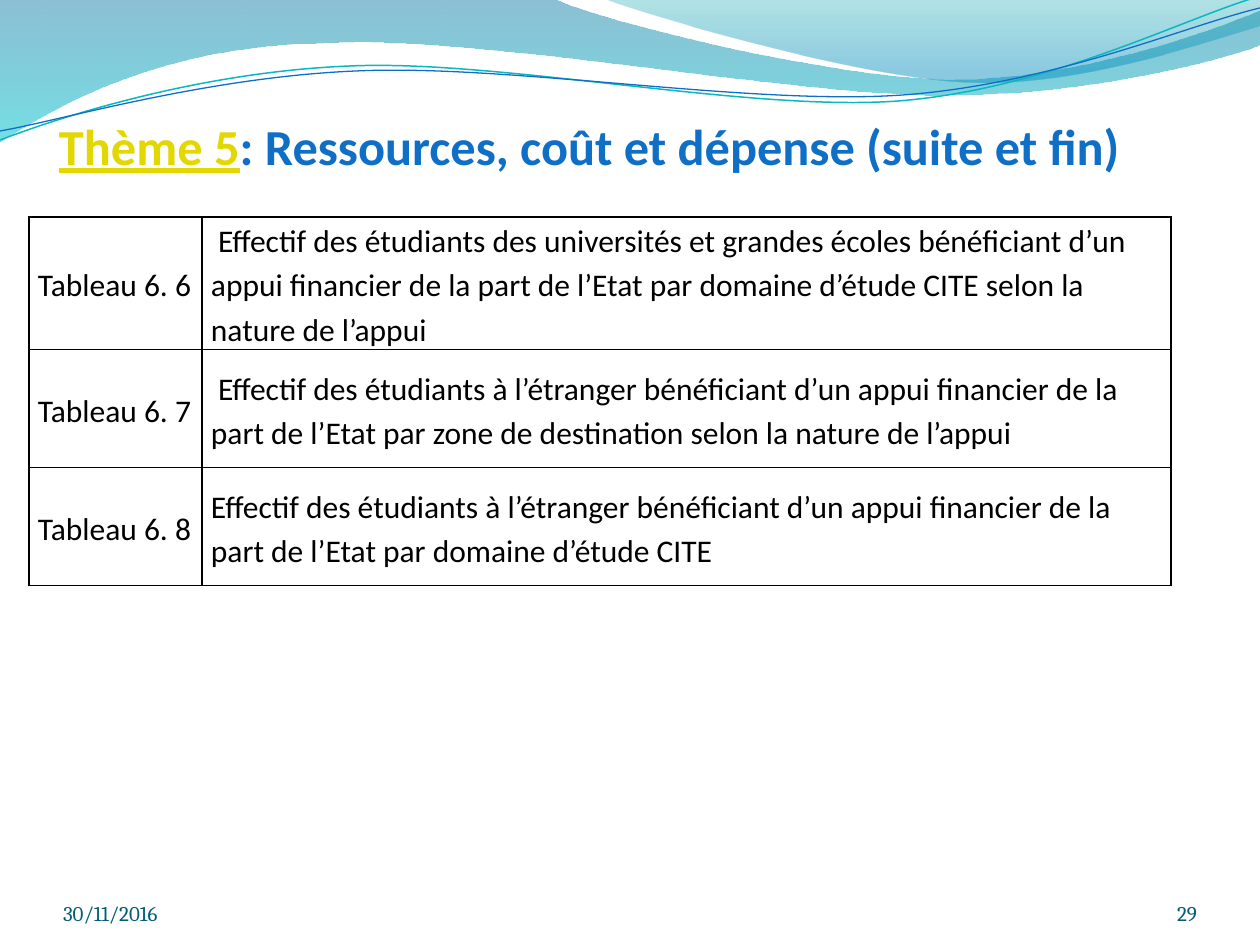
from dataclasses import dataclass

from lxml.etree import SubElement
from pptx import Presentation
from pptx.dml.color import RGBColor as RGB
from pptx.enum.text import MSO_ANCHOR as Anchor, MSO_AUTO_SIZE as AutoSize, PP_ALIGN as Align
from pptx.oxml import parse_xml
from pptx.oxml.ns import nsdecls, qn
from pptx.util import Pt

SCALE = 914400 / 126  # EMU per px
SLIDE_SIZE = (1260, 945)


@dataclass(frozen=True)
class Theme:
    body_font: str = "Calibri"
    footer_font: str = "Cambria"
    title_size: float = 28.8
    body_size: float = 18
    footer_size: float = 12
    accent: str = "E2D700"
    blue: str = "0F6FC6"
    teal: str = "0AB8BF"
    ink: str = "000000"
    footer: str = "045D75"
    # gradient stops: position, colour, opacity in %
    wide_wave: tuple = ((0, "0074A1", 45), (1, "00C6CF", 55))
    right_wave: tuple = ((0, "00A1A9", 30), (0.8, "008BBF", 45))


THEME = Theme()

TITLE = [("Thème 5", THEME.accent, True),
         (": Ressources, coût et dépense (suite et fin)", THEME.blue, False)]
TITLE_BOX = (59, 88, 1134, 88)

ROWS = [
    ("Tableau 6. 6", " Effectif des étudiants des universités et grandes écoles bénéficiant d’un "
     "appui financier de la part de l’Etat par domaine d’étude CITE selon la nature de l’appui"),
    ("Tableau 6. 7", " Effectif des étudiants à l’étranger bénéficiant d’un appui financier de la "
     "part de l’Etat par zone de destination selon la nature de l’appui"),
    ("Tableau 6. 8", "Effectif des étudiants à l’étranger bénéficiant d’un appui financier de la "
     "part de l’Etat par domaine d’étude CITE"),
]
TABLE_ORIGIN = (29, 217)
COLUMN_WIDTHS = (173, 969)
ROW_HEIGHTS = (132, 118, 118)

FOOTERS = [("29", (1092, 876, 105, 50), Align.RIGHT),
           ("30/11/2016", (63, 876, 294, 50), Align.LEFT)]

# Each outline is a start point, then straight steps (1 point) or Bézier steps (3 points).
WAVES = [
    (THEME.wide_wave, (0, 0), [
        [(554, -1)],
        [(600, 21), (837, 79), (955, 79)], [(1075, 79), (1207, 33), (1260, 11)],
        [(1261, 45)],
        [(1237, 55), (1096, 96), (940, 95)], [(784, 95), (481, 35), (324, 43)],
        [(163, 45), (58, 105), (-1, 142)], [(0, 0)]]),
    (THEME.right_wave, (604, -1), [
        [(641, 14), (859, 78), (969, 82)], [(1079, 87), (1211, 40), (1260, 26)],
        [(1260, 0)], [(604, -1)]]),
]
STRANDS = [
    (THEME.teal, 0.85, (0, 140), [
        [(60, 117), (199, 72), (349, 66)], [(498, 59), (747, 112), (898, 101)],
        [(1049, 89), (1182, 19), (1257, -3)]]),
    (THEME.blue, 0.75, (0, 131), [
        [(59, 121), (207, 77), (357, 71)], [(508, 64), (752, 106), (903, 95)],
        [(1053, 84), (1185, 26), (1260, 8)]]),
]


def emu(*lengths):
    return [round(length * SCALE) for length in lengths]


def add_outline(slide, start, steps, close):
    """Draw every point as a line segment, then merge each triple into a Bézier segment."""
    builder = slide.shapes.build_freeform(*emu(*start))
    builder.add_line_segments([emu(*point) for step in steps for point in step], close=close)
    outline = builder.convert_to_shape()
    outline.shadow.inherit = False
    segments = iter(list(outline._element.iter(qn("a:lnTo"))))
    for step in steps:
        lines = [next(segments) for _ in step]
        if len(lines) == 3:
            curve = parse_xml(f'<a:cubicBezTo {nsdecls("a")}/>')
            lines[0].addprevious(curve)
            for line in lines:
                curve.append(line[0])
                line.getparent().remove(line)
    return outline


def add_wave(slide, stops, start, steps):
    wave = add_outline(slide, start, steps, True)
    wave.line.fill.background()
    wave.fill.gradient()
    wave.fill.gradient_angle = 270
    for stop, (position, color, _) in zip(wave.fill.gradient_stops, stops):
        stop.position = position
        stop.color.rgb = RGB.from_string(color)
    for rgb, (_, _, opacity) in zip(wave._element.spPr.iter(qn("a:srgbClr")), stops):
        SubElement(rgb, qn("a:alpha")).set("val", str(opacity * 1000))


def add_strand(slide, color, width, start, steps):
    strand = add_outline(slide, start, steps, False)
    strand.fill.background()
    strand.line.color.rgb = RGB.from_string(color)
    strand.line.width = Pt(width)


def style(run, font, size, color, bold=False, underline=False):
    run.font.name, run.font.size = font, Pt(size)
    run.font.color.rgb = RGB.from_string(color)
    run.font.bold, run.font.underline = bold, underline


def set_frame(frame, top_margin=0):
    frame.word_wrap = True
    frame.auto_size = AutoSize.NONE
    frame.vertical_anchor = Anchor.BOTTOM
    frame.margin_left = frame.margin_right = frame.margin_bottom = 0
    frame.margin_top, = emu(top_margin)


def fill_title(title):
    title.left, title.top, title.width, title.height = emu(*TITLE_BOX)
    set_frame(title.text_frame, 6)
    heading = title.text_frame.paragraphs[0]
    heading.alignment = Align.LEFT
    for text, color, underline in TITLE:
        run = heading.add_run()
        run.text = text
        style(run, THEME.body_font, THEME.title_size, color, True, underline)


def add_borders(cell):
    properties = cell._tc.get_or_add_tcPr()
    for i, side in enumerate(("lnL", "lnR", "lnT", "lnB")):
        properties.insert(i, parse_xml(
            f'<a:{side} {nsdecls("a")} w="{Pt(1)}"><a:solidFill>'
            f'<a:srgbClr val="{THEME.ink}"/></a:solidFill></a:{side}>'))


def fill_cell(cell, text):
    cell.fill.background()
    add_borders(cell)
    cell.vertical_anchor = Anchor.MIDDLE
    cell.margin_left, cell.margin_right, cell.margin_top, cell.margin_bottom = emu(9, 9, 0, 0)
    cell.text_frame.text = text
    paragraph = cell.text_frame.paragraphs[0]
    paragraph.line_spacing = 1.15
    style(paragraph.runs[0], THEME.body_font, THEME.body_size, THEME.ink)


def add_list(slide):
    size = (sum(COLUMN_WIDTHS), sum(ROW_HEIGHTS))
    table = slide.shapes.add_table(len(ROWS), len(COLUMN_WIDTHS), *emu(*TABLE_ORIGIN, *size)).table
    table.first_row = table.horz_banding = False
    for column, width in zip(table.columns, emu(*COLUMN_WIDTHS)):
        column.width = width
    for row, height, texts in zip(table.rows, emu(*ROW_HEIGHTS), ROWS):
        row.height = height
        for cell, text in zip(row.cells, texts):
            fill_cell(cell, text)


def add_footer(slide, text, box, alignment):
    frame = slide.shapes.add_textbox(*emu(*box)).text_frame
    set_frame(frame)
    frame.text = text
    frame.paragraphs[0].alignment = alignment
    style(frame.paragraphs[0].runs[0], THEME.footer_font, THEME.footer_size, THEME.footer)


def main():
    deck = Presentation()
    deck.slide_width, deck.slide_height = emu(*SLIDE_SIZE)
    slide = deck.slides.add_slide(deck.slide_layouts[5])
    for wave in WAVES:
        add_wave(slide, *wave)
    for strand in STRANDS:
        add_strand(slide, *strand)
    fill_title(slide.shapes.title)
    add_list(slide)
    for footer in FOOTERS:
        add_footer(slide, *footer)
    deck.save("out.pptx")


if __name__ == "__main__":
    main()
